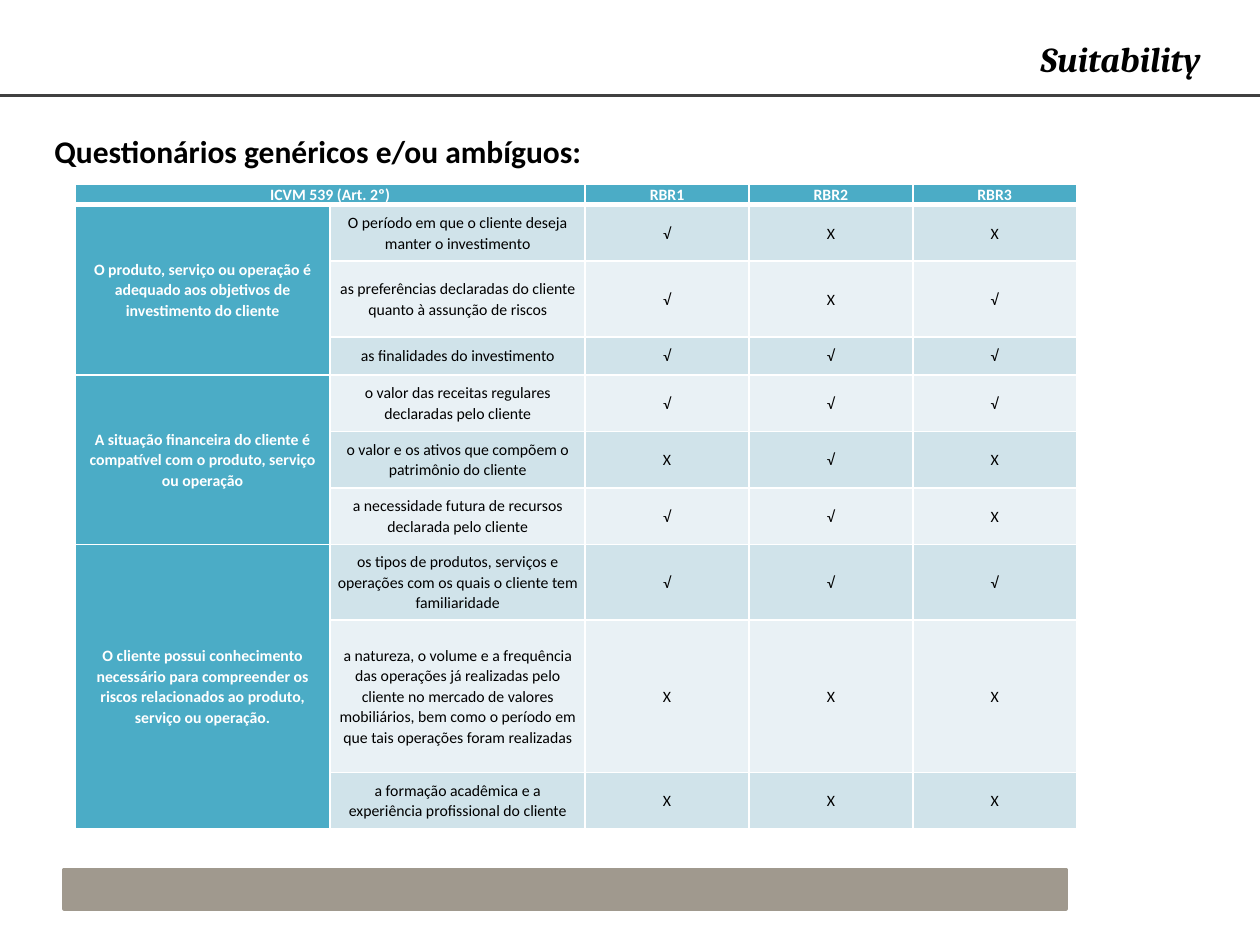
from lxml import etree
from pptx import Presentation
from pptx.dml.color import RGBColor
from pptx.enum.shapes import MSO_CONNECTOR, MSO_SHAPE
from pptx.enum.text import MSO_ANCHOR, PP_ALIGN
from pptx.oxml.ns import qn
from pptx.util import Pt

MIDDLE, TOP = MSO_ANCHOR.MIDDLE, MSO_ANCHOR.TOP
CENTER, RIGHT = PP_ALIGN.CENTER, PP_ALIGN.RIGHT
TITLE_ONLY = 5

THEME = {
    "heading_font": "Cambria", "body_font": "Calibri",
    "title_size": 20, "subtitle_size": 18, "table_size": 9,
    "black": "000000", "white": "FFFFFF", "rule": "404040",
    "bar": "A0998E", "header": "4BACC6", "bands": ("D0E3EA", "E9F1F5"),
}


def add_span(para, text, size, color, font=THEME["body_font"], bold=False, italic=False):
    span = para.add_run()
    span.text = text
    span.font.name = font
    span.font.size = Pt(size)
    span.font.bold = bold
    span.font.italic = italic
    span.font.color.rgb = RGBColor.from_string(color)


def style_cell(cell, fill, bottom_width):
    properties = cell._tc.get_or_add_tcPr()
    for side, width in (("L", 1), ("R", 1), ("T", 1), ("B", bottom_width)):
        line = etree.SubElement(properties, qn(f"a:ln{side}"), w=str(Pt(width)))
        solid = etree.SubElement(line, qn("a:solidFill"))
        etree.SubElement(solid, qn("a:srgbClr"), val=THEME["white"])
    cell.fill.solid()
    cell.fill.fore_color.rgb = RGBColor.from_string(fill)
    cell.margin_left = cell.margin_right = Pt(4.4)
    cell.margin_top = cell.margin_bottom = 0
    cell.vertical_anchor = MIDDLE


deck = Presentation()
deck.slide_width, deck.slide_height = Pt(720), Pt(540)
page = deck.slides.add_slide(deck.slide_layouts[TITLE_ONLY])

# Header rule and footer bar
rule = page.shapes.add_connector(MSO_CONNECTOR.STRAIGHT, 0, Pt(54.6), Pt(720), Pt(54.6))
rule.line.color.rgb = RGBColor.from_string(THEME["rule"])
rule.line.width = Pt(1.5)
etree.SubElement(rule._element.spPr, qn("a:effectLst"))

bar = page.shapes.add_shape(MSO_SHAPE.RECTANGLE, Pt(36.7), Pt(496.8), Pt(572.4), Pt(22.6))
bar.shadow.inherit = False
bar.fill.solid()
bar.fill.fore_color.rgb = RGBColor.from_string(THEME["bar"])
bar.line.color.rgb = RGBColor.from_string(THEME["bar"])
bar.line.width = Pt(2)

# Title
title = page.shapes.title
title.left, title.top, title.width, title.height = Pt(26), Pt(12.3), Pt(667.4), Pt(42)
title.text_frame.vertical_anchor = MIDDLE
para = title.text_frame.paragraphs[0]
para.alignment = RIGHT
add_span(para, "Suitability", THEME["title_size"], THEME["black"],
         THEME["heading_font"], bold=True, italic=True)

# Subtitle
subtitle = page.shapes.add_textbox(Pt(24), Pt(72), Pt(669), Pt(368))
subtitle.text_frame.word_wrap = True
subtitle.text_frame.vertical_anchor = TOP
para = subtitle.text_frame.paragraphs[0]
para.space_after = Pt(12)
add_span(para, "Questionários genéricos e/ou ambíguos:", THEME["subtitle_size"],
         THEME["black"], bold=True)

# Table content: each group holds (criterion, one mark per questionnaire, row height)
HEADINGS = ["ICVM 539 (Art. 2º)", "", "RBR1", "RBR2", "RBR3"]
GROUPS = [
    ("O produto, serviço ou operação é adequado aos objetivos de investimento do cliente", [
        ("O período em que o cliente deseja manter o investimento", "√XX", 32.3),
        ("as preferências declaradas do cliente quanto à assunção de riscos", "√X√", 43.3),
        ("as finalidades do investimento", "√√√", 21.6),
    ]),
    ("A situação financeira do cliente é compatível com o produto, serviço ou operação", [
        ("o valor das receitas regulares declaradas pelo cliente", "√√√", 32.3),
        ("o valor e os ativos que compõem o patrimônio do cliente", "X√X", 32.3),
        ("a necessidade futura de recursos declarada pelo cliente", "√√X", 32.3),
    ]),
    ("O cliente possui conhecimento necessário para compreender os riscos relacionados "
     "ao produto, serviço ou operação.", [
        ("os tipos de produtos, serviços e operações com os quais o cliente tem familiaridade",
         "√√√", 43.3),
        ("a natureza, o volume e a frequência das operações já realizadas pelo cliente no "
         "mercado de valores mobiliários, bem como o período em que tais operações foram "
         "realizadas", "XXX", 87),
        ("a formação acadêmica e a experiência profissional do cliente", "XXX", 32.3),
    ]),
]
COLUMN_WIDTHS = [145.8, 145.8, 93.6, 93.6, 93.6]

rows, heights = [HEADINGS], [10.8]
for group, criteria in GROUPS:
    for index, (criterion, marks, height) in enumerate(criteria):
        rows.append([group if index == 0 else "", criterion, *marks])
        heights.append(height)

# Table
table = page.shapes.add_table(len(rows), len(COLUMN_WIDTHS), Pt(42.8), Pt(105.4),
                              Pt(sum(COLUMN_WIDTHS)), Pt(sum(heights))).table
for column, width in zip(table.columns, COLUMN_WIDTHS):
    column.width = Pt(width)
for row, height in zip(table.rows, heights):
    row.height = Pt(height)

for r, texts in enumerate(rows):
    for c, text in enumerate(texts):
        cell = table.cell(r, c)
        is_heading = r == 0 or c == 0
        fill = THEME["header"] if is_heading else THEME["bands"][(r - 1) % 2]
        style_cell(cell, fill, 3 if r == 0 else 1)
        para = cell.text_frame.paragraphs[0]
        para.alignment = CENTER
        para.line_spacing = 1.07
        if text:
            color = THEME["white"] if is_heading else THEME["black"]
            add_span(para, text, THEME["table_size"], color, bold=is_heading)
        else:
            # Merged-away cells must not stretch their row
            etree.SubElement(para._p, qn("a:endParaRPr"), sz=str(THEME["table_size"] * 100))

# Merged headings
table.cell(0, 0).merge(table.cell(0, 1))
first = 1
for group, criteria in GROUPS:
    last = first + len(criteria) - 1
    table.cell(first, 0).merge(table.cell(last, 0))
    first = last + 1

deck.save("out.pptx")
